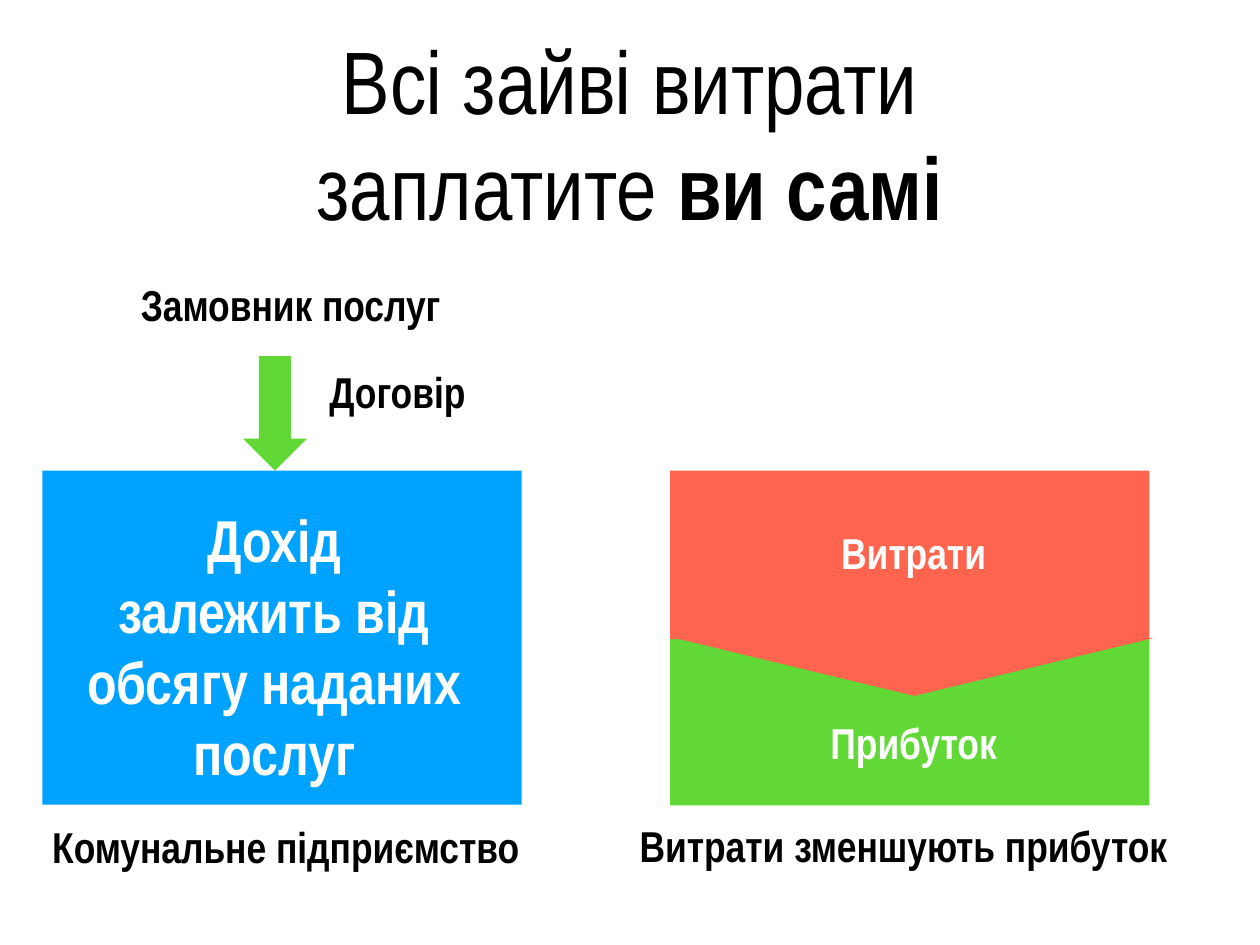
import pptx
import pptx.dml.color
import pptx.enum.shapes
import pptx.enum.text
import pptx.util

Pt = pptx.util.Pt
RGBColor = pptx.dml.color.RGBColor
Shape = pptx.enum.shapes.MSO_SHAPE
TextEnum = pptx.enum.text

BLACK = RGBColor(0x00, 0x00, 0x00)
WHITE = RGBColor(0xFF, 0xFF, 0xFF)
BLUE = RGBColor(0x00, 0xA2, 0xFF)
GREEN = RGBColor(0x61, 0xD8, 0x36)
RED = RGBColor(0xFF, 0x64, 0x4E)

FONT = "Arial Narrow"
INSET = 4
LABEL_SIZE = 35.1
BLOCK_TOP = 382.5
BLOCK_WIDTH = 389.5
INCOME_LEFT = 34.5
RESULT_LEFT = 544.5


def add_block(page, kind, left, top, width, height, color):
    block = page.shapes.add_shape(kind, Pt(left), Pt(top), Pt(width), Pt(height))
    block.shadow.inherit = False
    block.fill.solid()
    block.fill.fore_color.rgb = color
    block.line.fill.background()
    return block


def format_frame(frame):
    frame.word_wrap = True
    frame.auto_size = TextEnum.MSO_AUTO_SIZE.NONE
    frame.vertical_anchor = TextEnum.MSO_ANCHOR.MIDDLE
    frame.margin_left = frame.margin_right = Pt(INSET)
    frame.margin_top = frame.margin_bottom = Pt(INSET)
    para = frame.paragraphs[0]
    para.alignment = TextEnum.PP_ALIGN.CENTER
    return para


def add_span(para, text, size, color, bold=True):
    span = para.add_run()
    span.text = text
    span.font.name = FONT
    span.font.size = Pt(size)
    span.font.bold = bold
    span.font.color.rgb = color


def add_lines(para, lines, size, color, bold=True):
    for index, line in enumerate(lines):
        if index:
            para.add_line_break()
        add_span(para, line, size, color, bold)


def add_label(page, lines, left, top, width, height, color=BLACK, size=LABEL_SIZE):
    box = page.shapes.add_textbox(Pt(left), Pt(top), Pt(width), Pt(height))
    add_lines(format_frame(box.text_frame), lines, size, color)


def fill_title(page):
    title = page.shapes.title
    title.left, title.top = Pt(70.5), Pt(13.5)
    title.width, title.height = Pt(882.5), Pt(188)
    para = format_frame(title.text_frame)
    add_lines(para, ["Всі зайві витрати", "заплатите "], 72, BLACK, bold=False)
    add_span(para, "ви самі", 72, BLACK)


def add_income(page):
    add_block(page, Shape.RECTANGLE, INCOME_LEFT, BLOCK_TOP, BLOCK_WIDTH, 271.5, BLUE)
    add_block(page, Shape.DOWN_ARROW, 197.5, 289.5, 52, 93, GREEN)
    add_label(page, ["Замовник послуг"], 31, 214.5, 410.5, 66)
    add_label(page, ["Договір"], 214, 275, 218, 85.5)
    add_label(page, ["Дохід", "залежить від обсягу наданих послуг"],
              40.5, 414.5, 365, 219.5, WHITE, 48)
    add_label(page, ["Комунальне підприємство "], 31, 654.5, 410.5, 66)


def add_result(page):
    add_block(page, Shape.RECTANGLE, RESULT_LEFT, 518, BLOCK_WIDTH, 136.5, GREEN)
    add_block(page, Shape.RECTANGLE, RESULT_LEFT, BLOCK_TOP, BLOCK_WIDTH, 137, RED)
    wedge = add_block(page, Shape.ISOSCELES_TRIANGLE, 548.5, 518.5, 389, 47, RED)
    wedge.rotation = 180
    add_label(page, ["Витрати"], 633.5, 406, 218, 85.5, WHITE)
    add_label(page, ["Прибуток"], 633.5, 571, 218, 64, WHITE)
    add_label(page, ["Витрати зменшують прибуток"], 501, 651.5, 466.5, 71.5)


def main():
    deck = pptx.Presentation()
    deck.slide_width, deck.slide_height = Pt(1024), Pt(768)
    page = deck.slides.add_slide(deck.slide_layouts[5])
    fill_title(page)
    add_income(page)
    add_result(page)
    deck.save("out.pptx")


if __name__ == "__main__":
    main()
